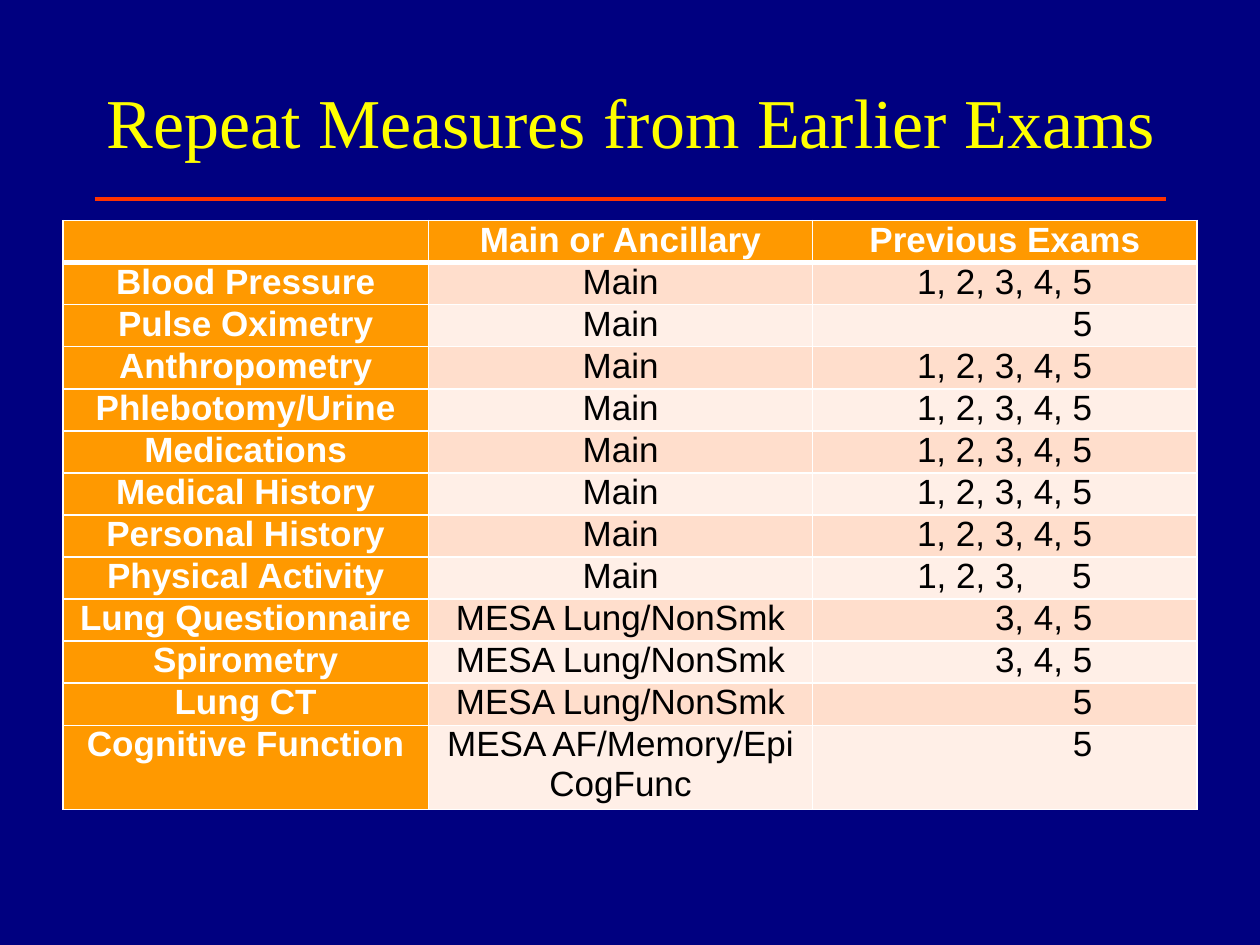
from lxml import etree
from pptx import Presentation
from pptx.dml.color import RGBColor
from pptx.enum.shapes import MSO_CONNECTOR
from pptx.enum.text import MSO_ANCHOR, PP_ALIGN
from pptx.oxml.ns import qn
from pptx.util import Inches, Pt

COLORS = {
    "background": "000080", "title": "FFFF00", "rule": "FF3300",
    "heading": "FF9900", "odd": "FFDECC", "even": "FFEFE7",
    "light": "FFFFFF", "dark": "000000",
}
COLUMN_WIDTHS = [2.9, 3.05, 3.05]
HEADER_HEIGHT, ROW_HEIGHT = 0.33, 0.29
CELL_INSET = 0.04
EXAM_INSET = 0.83
LAST_EXAM_TAB = 1.23

ALL_EXAMS = "1, 2, 3, 4, 5"
LUNG_STUDY = "MESA Lung/NonSmk"
ROWS = [
    ("", "Main or Ancillary", "Previous Exams"),
    ("Blood Pressure", "Main", ALL_EXAMS),
    ("Pulse Oximetry", "Main", "5"),
    ("Anthropometry", "Main", ALL_EXAMS),
    ("Phlebotomy/Urine", "Main", ALL_EXAMS),
    ("Medications", "Main", ALL_EXAMS),
    ("Medical History", "Main", ALL_EXAMS),
    ("Personal History", "Main", ALL_EXAMS),
    ("Physical Activity", "Main", "1, 2, 3,\t5"),
    ("Lung Questionnaire", LUNG_STUDY, "3, 4, 5"),
    ("Spirometry", LUNG_STUDY, "3, 4, 5"),
    ("Lung CT", LUNG_STUDY, "5"),
    ("Cognitive Function", "MESA AF/Memory/Epi CogFunc", "5"),
]


def color(name):
    return RGBColor.from_string(COLORS[name])


def add_span(para, text, font, size, color_name, bold=False):
    span = para.add_run()
    span.text = text
    span.font.name = font
    span.font.size = Pt(size)
    span.font.bold = bold
    span.font.color.rgb = color(color_name)


def add_title(page, left, top, width, height):
    """Place the title with a rule along the foot of its box."""
    rule = page.shapes.add_connector(
        MSO_CONNECTOR.STRAIGHT, Inches(left), Inches(top + height),
        Inches(left + 8.5), Inches(top + height))
    rule.line.color.rgb = color("rule")
    rule.line.width = Pt(2)
    etree.SubElement(rule._element.spPr, qn("a:effectLst"))

    box = page.shapes.add_textbox(
        Inches(left), Inches(top), Inches(width), Inches(height))
    frame = box.text_frame
    frame.word_wrap = True
    frame.vertical_anchor = MSO_ANCHOR.MIDDLE
    add_span(frame.paragraphs[0], "Repeat Measures from Earlier Exams",
             "Times New Roman", 40, "title")


def set_borders(cell, top, bottom):
    """Draw white borders; top and bottom are widths in points."""
    properties = cell._tc.get_or_add_tcPr()
    sides = [("lnL", 1), ("lnR", 1), ("lnT", top), ("lnB", bottom)]
    for index, (side, width) in enumerate(sides):
        line = etree.Element(qn(f"a:{side}"), w=str(Pt(width)))
        fill = etree.SubElement(line, qn("a:solidFill"))
        etree.SubElement(fill, qn("a:srgbClr"), val=COLORS["light"])
        properties.insert(index, line)


def align_exams(cell, para, text):
    """Line the exam numbers up so that the last one ends every row."""
    if "\t" in text:
        cell.margin_left = Inches(EXAM_INSET)
        para.alignment = PP_ALIGN.LEFT
        tabs = etree.SubElement(para._p.get_or_add_pPr(), qn("a:tabLst"))
        etree.SubElement(tabs, qn("a:tab"),
                         pos=str(Inches(LAST_EXAM_TAB)), algn="l")
    else:
        cell.margin_right = Inches(EXAM_INSET)
        para.alignment = PP_ALIGN.RIGHT


def fill_cell(cell, text, row, column):
    heading = row == 0 or column == 0
    fill_name = "heading" if heading else "odd" if row % 2 else "even"
    cell.fill.solid()
    cell.fill.fore_color.rgb = color(fill_name)
    set_borders(cell, 3 if row == 1 else 1, 3 if row == 0 else 1)
    cell.margin_left = cell.margin_right = Inches(CELL_INSET)
    cell.margin_top = cell.margin_bottom = 0
    if not text:
        return
    para = cell.text_frame.paragraphs[0]
    para.alignment = PP_ALIGN.CENTER
    if column == 2 and not heading:
        align_exams(cell, para, text)
    add_span(para, text, "Arial", 20, "light" if heading else "dark", heading)


def add_measures_table(page, left, top):
    height = HEADER_HEIGHT + ROW_HEIGHT * (len(ROWS) - 1)
    table = page.shapes.add_table(
        len(ROWS), len(COLUMN_WIDTHS), Inches(left), Inches(top),
        Inches(sum(COLUMN_WIDTHS)), Inches(height)).table
    for column, width in zip(table.columns, COLUMN_WIDTHS):
        column.width = Inches(width)
    for row, texts in enumerate(ROWS):
        table.rows[row].height = Inches(ROW_HEIGHT if row else HEADER_HEIGHT)
        for column, text in enumerate(texts):
            fill_cell(table.cell(row, column), text, row, column)


def main():
    deck = Presentation()
    deck.slide_width, deck.slide_height = Inches(10), Inches(7.5)
    page = deck.slides.add_slide(deck.slide_layouts[6])
    page.background.fill.solid()
    page.background.fill.fore_color.rgb = color("background")
    add_title(page, 0.75, 0.33, 8.75, 1.25)
    add_measures_table(page, 0.5, 1.75)
    deck.save("out.pptx")


if __name__ == "__main__":
    main()
